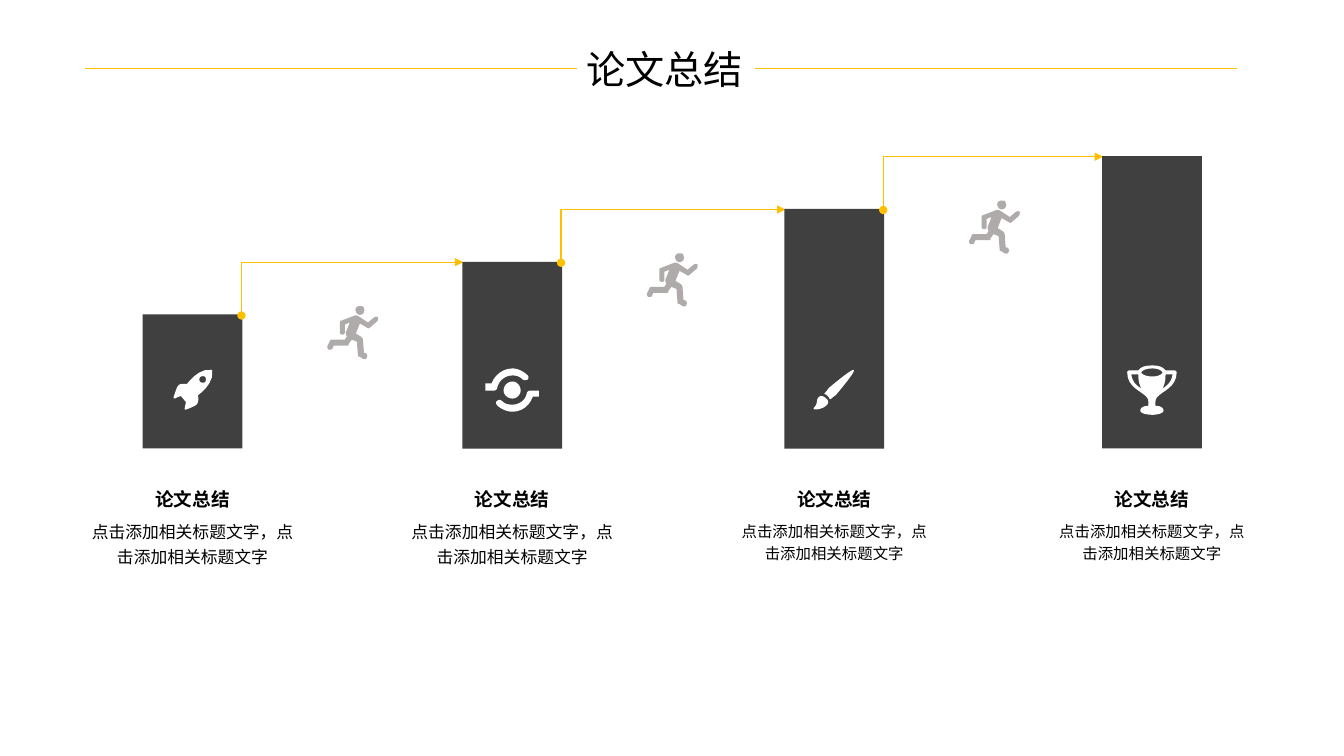
from pptx import Presentation
from pptx.dml.color import RGBColor
from pptx.enum.shapes import MSO_CONNECTOR as CONN, MSO_SHAPE as SHAPE
from pptx.enum.text import MSO_ANCHOR as ANCHOR, PP_ALIGN as ALIGN
from pptx.oxml.ns import qn
from pptx.util import Inches, Pt
from lxml.etree import SubElement

COLORS = {"bar": "404040", "accent": "FFC000", "runner": "AFABAB",
          "icon": "FFFFFF", "text": "000000"}
FONT, TITLE_FONT = "Noto Sans CJK SC", "Noto Sans CJK JP"

# Slide grid: 1333 columns by 750 rows
COLS, ROWS = 1333, 750
BAR_W, BAR_FOOT, ICON_Y = 99, 445, 387
STEP_W, STEP_BOTTOM = 238, 596
FIRST_TOP, RISE = 312, 52.33
STEP_LEFTS = [72, 389, 708.5, 1023.5]
BODY_SIZES = [12, 12, 11, 11]
TITLE = "论文总结"
BODY = ["点击添加相关标题文字，点", "击添加相关标题文字"]

ROCKET = (39, 40, """
M 27 12 C 26 11 26 8 27 7 C 29 6 31 6 32 7 C 33 8 33 11 32 12 C 31 13 29 13 27 12
M 25 25 C 25 25 41 14 39 1 C 39 0 39 0 38 0 C 25 -2 14 14 14 14 C 4 13 5 15 1 26
C 0 28 1 29 3 28 C 4 27 8 26 8 26 L 13 32 C 13 32 12 36 12 37 C 11 39 12 40 14 39
C 24 35 26 35 25 25""")
ORBIT = (53, 43, """
M 45 22 C 42 22 41 24 41 25 C 40 31 34 36 27 36 C 22 36 19 35 16 32
C 15 31 13 31 12 32 C 10 33 10 35 12 37 C 15 40 21 43 27 43 C 36 43 44 37 47 28
L 53 28 L 53 22
M 12 18 C 14 12 19 7 27 7 C 31 7 34 8 37 11 C 38 12 40 12 42 11 C 43 10 43 8 42 7
C 38 3 32 0 27 0 C 17 0 9 7 6 15 L 0 15 L 0 22 L 9 22 C 11 22 12 19 12 18
M 18 22 C 18 26 22 30 27 30 C 31 30 35 26 35 22 C 35 17 31 13 27 13
C 22 13 18 17 18 22""")
BRUSH = (41, 40, """
M 40 0 C 39 -2 21 13 15 18 C 13 21 12 22 11 23 C 10 24 11 24 11 24
C 12 24 13 25 14 26 C 15 27 15 27 16 29 C 16 29 16 29 17 29
C 18 28 19 27 22 25 C 27 19 42 1 40 0
M 5 27 C 2 30 5 33 0 38 C -2 40 8 40 13 35 C 15 33 15 30 12 28 C 10 26 7 25 5 27""")
TROPHY = (49, 49, """
M 4 9 L 11 9 C 11 15 12 19 14 23 C 9 20 5 16 4 9
M 25 3 C 32 3 35 6 35 7 C 35 8 32 11 25 11 C 17 11 14 8 14 7 C 14 6 17 3 25 3
M 35 23 C 37 19 38 15 38 9 L 45 9 C 44 16 40 20 35 23
M 28 36 C 28 32 31 30 35 27 C 41 23 49 18 49 7 C 49 6 48 5 47 5 L 38 5
C 36 2 32 0 25 0 C 17 0 13 2 11 5 L 2 5 C 1 5 0 6 0 7 C 0 18 8 23 14 27
C 18 30 21 32 21 36 L 21 40 C 16 40 13 42 13 45 C 13 47 18 49 25 49
C 31 49 36 47 36 45 C 36 42 33 40 28 40 L 28 36""")
RUNNER = (50, 53, """
M 34 9 C 36 8 37 6 36 3 C 36 1 33 0 30 1 C 28 2 27 4 28 6 C 29 9 31 10 34 9
M 50 12 C 49 11 47 11 46 12 L 40 17 L 31 11 L 29 10 L 27 10 L 14 15
C 13 15 12 16 12 17 L 12 27 C 12 28 13 29 15 29 C 16 29 17 28 17 27 L 17 19
L 22 17 L 18 27 C 18 28 18 29 19 31 L 17 34 L 4 34 C 3 34 2 35 2 36 L 0 40
C -1 41 0 43 1 44 C 3 44 5 44 5 42 L 6 40 L 18 40 C 20 40 21 40 21 38 L 24 34
L 29 36 L 30 49 C 30 50 30 51 32 51 L 35 53 C 37 54 39 53 39 51
C 40 50 39 48 37 47 L 36 47 L 35 34 C 35 33 34 32 33 31 L 28 28 L 32 18 L 39 22
C 40 23 41 23 42 22 L 49 16 C 50 15 50 13 50 12""")
ICONS = [ROCKET, ORBIT, BRUSH, TROPHY]


def cells(*values):
    return [Inches(v / 100) for v in values]


def rgb(name):
    return RGBColor.from_string(COLORS[name])


def paint(sp, color):
    sp.shadow.inherit = False
    sp.fill.solid()
    sp.fill.fore_color.rgb = rgb(color)
    sp.line.fill.background()


def add_text(shapes, box, lines, size, font=FONT, bold=False, spacing=None,
             anchor=ANCHOR.TOP, wrap=True, inset=(4, 4)):
    tf = shapes.add_textbox(*cells(*box)).text_frame
    tf.word_wrap, tf.vertical_anchor = wrap, anchor
    tf.margin_left = tf.margin_right = cells(inset[0])[0]
    tf.margin_top = tf.margin_bottom = cells(inset[1])[0]
    for i, line in enumerate(lines):
        p = tf.paragraphs[0] if i == 0 else tf.add_paragraph()
        p.alignment, p.line_spacing = ALIGN.CENTER, spacing
        r = p.add_run()
        r.text = line
        r.font.size, r.font.bold, r.font.name = Pt(size), bold, font
        r.font.color.rgb = rgb("text")
        SubElement(r.font._element, qn("a:ea"), typeface=font)


def contours(outline, steps=6):
    tokens, result = iter(outline.split()), []

    def point():
        return float(next(tokens)), float(next(tokens))

    for command in tokens:
        if command == "M":
            result.append([point()])
        elif command == "L":
            result[-1].append(point())
        else:
            a, b, c, d = result[-1][-1], point(), point(), point()
            for k in range(1, steps + 1):
                t = k / steps
                v = 1 - t
                weights = v**3, 3 * v * v * t, 3 * v * t * t, t**3
                result[-1].append(tuple(sum(w * q for w, q in zip(weights, axis))
                                        for axis in zip(a, b, c, d)))
    return result


def add_icon(shapes, x, y, outline, color):
    paths = [[cells(x + px, y + py) for px, py in path]
             for path in contours(outline)]
    builder = shapes.build_freeform(*paths[0][0], scale=1.0)
    for i, path in enumerate(paths):
        if i:
            builder.move_to(*path[0])
        builder.add_line_segments(path[1:], close=True)
    paint(builder.convert_to_shape(), color)


def add_climb(shapes, x, y, next_x, next_y):
    builder = shapes.build_freeform(*cells(x, y), scale=1.0)
    builder.add_line_segments([cells(x, next_y), cells(next_x, next_y)], close=False)
    sp = builder.convert_to_shape()
    sp.shadow.inherit = False
    sp.fill.background()
    sp.line.color.rgb, sp.line.width = rgb("accent"), Pt(1)
    ln = sp.line._get_or_add_ln()
    SubElement(ln, qn("a:headEnd"), type="oval")
    SubElement(ln, qn("a:tailEnd"), type="triangle")


def add_step(s, box, icon, body_size, next_corner):
    x, y, w, h = box
    shapes = s.shapes.add_group_shape().shapes
    bar_x, bottom = x + (w - BAR_W) / 2, y + h
    paint(shapes.add_shape(SHAPE.RECTANGLE, *cells(bar_x, y, BAR_W, BAR_FOOT - y)), "bar")
    icon_w, icon_h, outline = icon
    add_icon(shapes, x + (w - icon_w) / 2, ICON_Y - icon_h / 2, outline, "icon")
    if next_corner:
        add_climb(shapes, bar_x + BAR_W - 1, y + 1, *next_corner)
        add_icon(shapes, bar_x + 183.5, y - 9, RUNNER[2], "runner")
    add_text(shapes, (x, bottom - 86, w, 86), BODY, body_size, spacing=1.2)
    add_text(shapes, (x, bottom - 120, w, 38), [TITLE], 13.3, bold=True,
             anchor=ANCHOR.MIDDLE, wrap=False)


def add_header(s, box):
    x, y, w, h = box
    add_text(s.shapes, (x + 421, y, 308, h), [TITLE], 28, font=TITLE_FONT, inset=(10, 5))
    for left, right in ((x, x + 488), (x + 665, x + w)):
        rule = s.shapes.add_connector(CONN.STRAIGHT, *cells(left, y + 28, right, y + 28))
        rule.line.color.rgb, rule.line.width = rgb("accent"), Pt(0.5)
        SubElement(rule._element.spPr, qn("a:effectLst"))


def main():
    prs = Presentation()
    prs.slide_width, prs.slide_height = cells(COLS, ROWS)
    s = prs.slides.add_slide(prs.slide_layouts[6])
    tops = [FIRST_TOP - RISE * i for i in range(len(ICONS))]
    corners = [(x + (STEP_W - BAR_W) / 2 + 1, y + 0.5)
               for x, y in zip(STEP_LEFTS, tops)]
    for x, y, icon, size, corner in zip(STEP_LEFTS, tops, ICONS, BODY_SIZES,
                                        corners[1:] + [None]):
        add_step(s, (x, y, STEP_W, STEP_BOTTOM - y), icon, size, corner)
    add_header(s, (84, 40, 1143, 57))
    prs.save("out.pptx")


if __name__ == "__main__":
    main()
